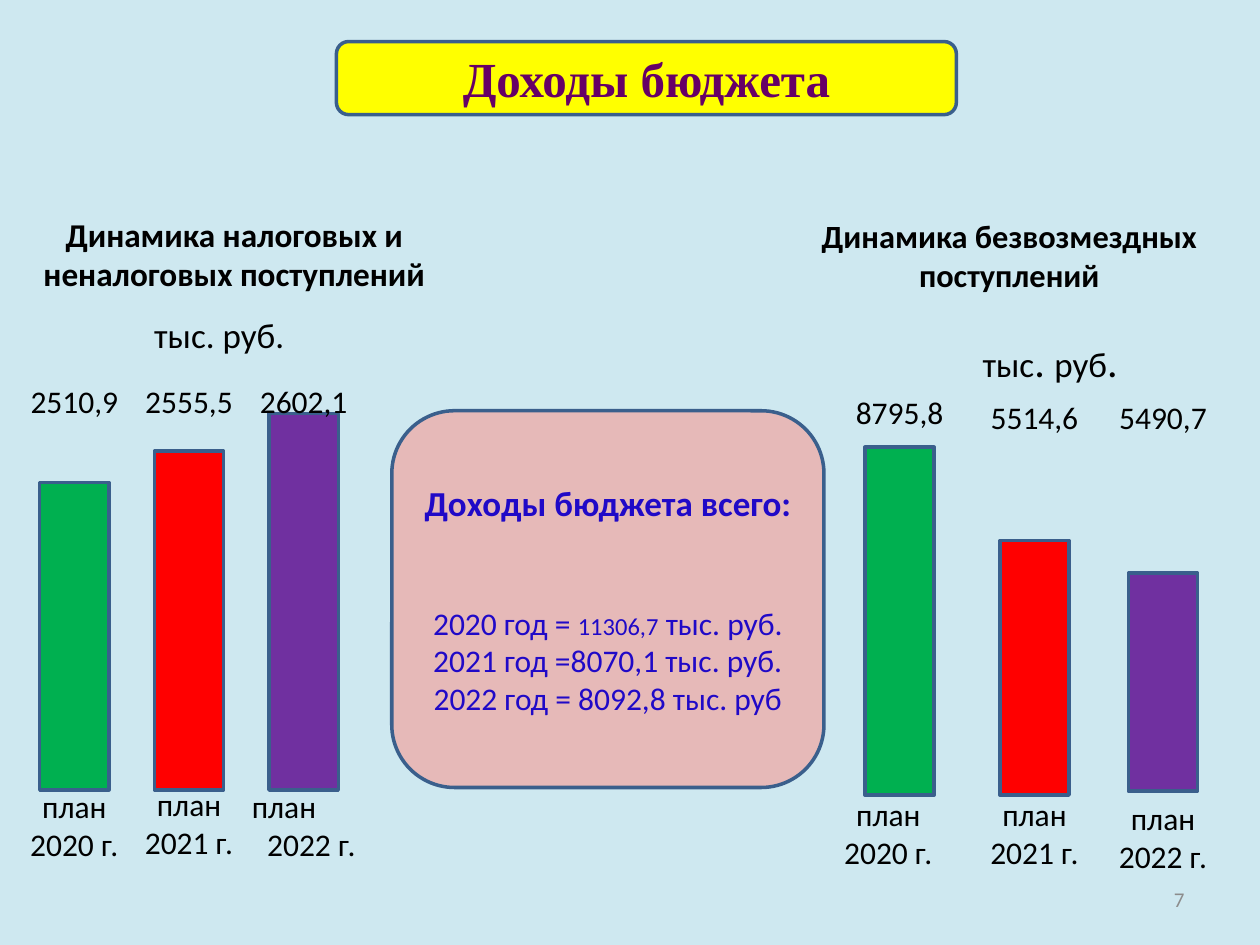
from dataclasses import dataclass

from pptx import Presentation
from pptx.dml.color import RGBColor
from pptx.enum.shapes import MSO_SHAPE as Shape
from pptx.enum.text import MSO_ANCHOR as Anchor, PP_ALIGN as Align
from pptx.util import Inches, Pt

BORDER = "3A5F8C"
BAR_COLORS = ("00B050", "FF0000", "7030A0")
BAR_WIDTH = 0.55
LABEL_WIDTH = 1.02


@dataclass
class Bar:
    """One column with its labels, in inches relative to its region."""
    value: str
    caption: list
    center: float
    top: float
    base: float
    value_middle: float
    caption_middle: float
    caption_shift: float = 0
    caption_aligns: tuple = (Align.CENTER,)


def rgb(color):
    """Turn a hex string into a colour."""
    return RGBColor.from_string(color)


def write(frame, paragraphs, size=18, color="000000", font="Calibri", bold=False,
          aligns=(Align.CENTER,), anchor=Anchor.MIDDLE, wrap=True, before=()):
    """Fill a text frame; a paragraph is a string or a list of (text, size) runs."""
    frame.word_wrap = wrap
    frame.vertical_anchor = anchor
    for index, content in enumerate(paragraphs):
        paragraph = frame.paragraphs[0] if index == 0 else frame.add_paragraph()
        paragraph.alignment = aligns[index % len(aligns)]
        paragraph.space_before = Pt(before[index] if index < len(before) else 0)
        runs = [(content, size)] if isinstance(content, str) else content
        for text, run_size in runs:
            run = paragraph.add_run()
            run.text = text
            run.font.name = font
            run.font.size = Pt(run_size)
            run.font.bold = bold
            run.font.color.rgb = rgb(color)


def add_text(slide, box, paragraphs, **style):
    """Add a text box at (left, top, width, height) in inches."""
    label = slide.shapes.add_textbox(*map(Inches, box))
    write(label.text_frame, paragraphs, **style)


def add_block(slide, kind, box, fill):
    """Add a filled, outlined shape without shadow."""
    block = slide.shapes.add_shape(kind, *map(Inches, box))
    block.shadow.inherit = False
    block.fill.solid()
    block.fill.fore_color.rgb = rgb(fill)
    block.line.color.rgb = rgb(BORDER)
    block.line.width = Pt(2)
    return block


def add_title(slide, box):
    """Put the slide title on its yellow plate."""
    add_block(slide, Shape.ROUNDED_RECTANGLE, box, "FFFF00")
    title = slide.shapes.title
    title.left, title.top, title.width, title.height = map(Inches, box)
    write(title.text_frame, ["Доходы бюджета"], size=28, color="660066",
          font="Times New Roman", bold=True)
    tree = title.element.getparent()
    tree.append(title.element)


def add_totals(slide, box):
    """Add the central panel with the budget totals."""
    panel = add_block(slide, Shape.ROUNDED_RECTANGLE, box, "E6B9B8")
    frame = panel.text_frame
    write(frame, ["Доходы бюджета всего:"], size=20, color="2009C7", bold=True)
    years = [
        [("2020 год = ", 18), ("11306,7", 14), (" тыс. руб.", 18)],
        "2021 год =8070,1 тыс. руб.",
        "2022 год = 8092,8 тыс. руб",
    ]
    for index, year in enumerate(years):
        paragraph = frame.add_paragraph()
        paragraph.alignment = Align.CENTER
        paragraph.space_before = Pt(0 if index else 46)
        for text, size in [(year, 18)] if isinstance(year, str) else year:
            run = paragraph.add_run()
            run.text = text
            run.font.name = "Calibri"
            run.font.size = Pt(size)
            run.font.bold = False
            run.font.color.rgb = rgb("2009C7")


def add_dynamics(slide, box, heading, heading_size, unit, unit_box, bars):
    """Add a heading, a unit and three labelled columns inside the box."""
    left, top, width, _ = box
    add_text(slide, (left, top, width, 0.7), heading, size=heading_size, bold=True,
             anchor=Anchor.BOTTOM)
    unit_left, unit_top, unit_width, unit_height = unit_box
    add_text(slide, (left + unit_left, top + unit_top, unit_width, unit_height),
             [unit], size=20)
    for bar, color in zip(bars, BAR_COLORS):
        center = left + bar.center
        label_left = center - LABEL_WIDTH / 2
        add_block(slide, Shape.RECTANGLE,
                  (center - BAR_WIDTH / 2, top + bar.top, BAR_WIDTH, bar.base - bar.top),
                  color)
        add_text(slide, (label_left, top + bar.value_middle - 0.2, LABEL_WIDTH, 0.4),
                 [bar.value], wrap=False)
        add_text(slide, (label_left + bar.caption_shift, top + bar.caption_middle - 0.35,
                         LABEL_WIDTH, 0.7),
                 bar.caption, aligns=bar.caption_aligns)


def add_number(slide, box):
    """Add the slide number."""
    add_text(slide, box, ["7"], size=12, color="8C8C8C", aligns=(Align.RIGHT,))


def main():
    """Build and save the slide."""
    deck = Presentation()
    deck.slide_width, deck.slide_height = Inches(10), Inches(7.5)
    slide = deck.slides.add_slide(deck.slide_layouts[5])
    slide.background.fill.solid()
    slide.background.fill.fore_color.rgb = rgb("CEE8F0")

    own_income = [
        Bar("2510,9", ["план 2020 г."], 0.51, 2.15, 4.59, 1.5, 4.87),
        Bar("2555,5", ["план 2021 г."], 1.42, 1.9, 4.59, 1.5, 4.85),
        Bar("2602,1", ["план", "2022 г."], 2.33, 1.6, 4.59, 1.5, 4.87,
            caption_aligns=(Align.LEFT, Align.RIGHT)),
    ]
    grants = [
        Bar("8795,8", ["план 2020 г."], 0.9, 1.87, 4.63, 1.59, 4.93, -0.09),
        Bar("5514,6", ["план 2021 г."], 1.97, 2.61, 4.63, 1.63, 4.93),
        Bar("5490,7", ["план 2022 г."], 2.99, 2.87, 4.6, 1.63, 4.96),
    ]
    add_dynamics(slide, (0.08, 1.68, 3.56, 5.1),
                 ["Динамика налоговых и неналоговых поступлений"], 19,
                 "тыс. руб.", (0.91, 0.75, 1.5, 0.45), own_income)
    add_dynamics(slide, (6.24, 1.68, 3.54, 5.1),
                 ["Динамика безвозмездных", "поступлений"], 18.5,
                 [("тыс", 20), (". ", 24), ("руб", 20), (".", 24)],
                 (0.76, 0.93, 2.67, 0.5), grants)
    add_totals(slide, (3.11, 3.26, 3.43, 2.99))
    add_title(slide, (2.67, 0.33, 4.92, 0.58))
    add_number(slide, (7.17, 6.94, 2.33, 0.4))
    deck.save("out.pptx")


if __name__ == "__main__":
    main()
